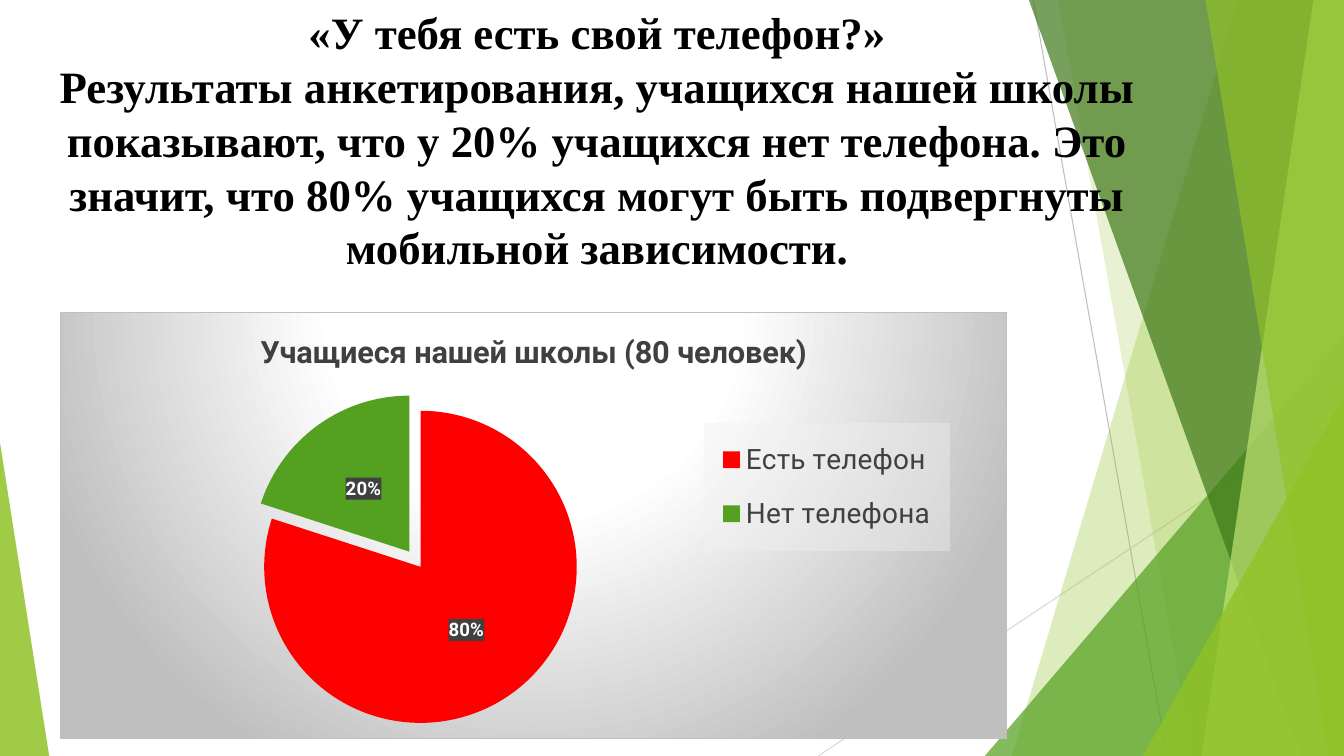
from lxml import etree
from pptx import Presentation, util as u
from pptx.chart.data import CategoryChartData
from pptx.dml.color import RGBColor
from pptx.enum import chart as ch, shapes, text
from pptx.oxml import parse_xml
from pptx.oxml.ns import nsdecls, qn

Cm = u.Cm
LIME = RGBColor(0x90, 0xC2, 0x26)
GREEN = RGBColor(0x54, 0xA0, 0x21)
MOSS = RGBColor(0x3F, 0x78, 0x19)
PALE = RGBColor(0xC0, 0xE4, 0x74)
RED = RGBColor(0xFF, 0, 0)
BLACK = RGBColor(0, 0, 0)
WHITE = RGBColor(0xFF, 0xFF, 0xFF)
DARK = RGBColor(0x40, 0x40, 0x40)
GRAY = RGBColor(0xBF, 0xBF, 0xBF)
LIGHT = RGBColor(0xD9, 0xD9, 0xD9)
MIST = RGBColor(0xF2, 0xF2, 0xF2)
WIDE, HIGH = 33.87, 19.05


def write(frame, words, size, face, color, bold=True, pitch=None):
    para = frame.paragraphs[0]
    para.text = words
    para.alignment = text.PP_ALIGN.CENTER
    if pitch:
        para.line_spacing = u.Pt(pitch)
    for run in para.runs:
        font = run.font
        font.size, font.name, font.bold = u.Pt(size), face, bold
        font.color.rgb = color


def veil(color, alpha):
    """Return a solid fill element with the given opacity in percent."""
    return (f'<a:solidFill><a:srgbClr val="{color}">'
            f'<a:alpha val="{alpha * 1000}"/></a:srgbClr></a:solidFill>')


deck = Presentation()
deck.slide_width, deck.slide_height = Cm(WIDE), Cm(HIGH)
slide = deck.slides.add_slide(deck.slide_layouts[6])
items = slide.shapes

# Thin lines behind the green bands
for x1, y1, x2, y2, color in [(26.04, 0, 29.41, HIGH, GRAY),
                              (WIDE, 10.24, 20.62, HIGH, LIGHT)]:
    line = items.add_connector(shapes.MSO_CONNECTOR.STRAIGHT,
                               Cm(x1), Cm(y1), Cm(x2), Cm(y2))
    line.line.color.rgb, line.line.width = color, u.Pt(0.75)
    etree.SubElement(line._element.spPr, qn("a:effectLst"))

# Bands reach the right edge: (top x, bottom x)
# Triangles stand on the bottom edge: (left, top, width, apex)
facets = [
    ((31.19, 25.5), LIME, 30),
    ((26.67, 30.05), LIME, 20),
    ((24.82, 8.46, 9.05, 1), GREEN, 72),
    ((25.93, 32.79), MOSS, 70),
    ((33.1, 30.28), PALE, 70),
    ((30.38, 33.48), LIME, 65),
    ((28.8, 9.98, 5.07, 1), LIME, 80),
    ((0, 11.15, 1.24, 0), LIME, 85),
]
for place, color, alpha in facets:
    if len(place) == 2:
        top, low = place
        path = items.build_freeform(top * 100, 0, scale=Cm(0.01))
        path.add_line_segments([(WIDE * 100, 0), (WIDE * 100, HIGH * 100),
                                (low * 100, HIGH * 100)])
        facet = path.convert_to_shape()
    else:
        left, top, width, apex = place
        facet = items.add_shape(shapes.MSO_SHAPE.ISOSCELES_TRIANGLE, Cm(left),
                                Cm(top), Cm(width), Cm(HIGH - top))
        facet.adjustments[0] = apex
    facet.shadow.inherit = False
    facet.line.fill.background()
    facet.fill.solid()
    facet.fill.fore_color.rgb = color
    tone = facet._element.spPr.find(".//" + qn("a:srgbClr"))
    etree.SubElement(tone, qn("a:alpha")).set("val", str(alpha * 1000))

# Heading
head = items.add_textbox(0, 0, Cm(30.1), Cm(7.4)).text_frame
head.word_wrap = True
write(head, "«У тебя есть свой телефон?»\vРезультаты анкетирования, учащихся "
      "нашей школы показывают, что у 20% учащихся нет телефона. Это значит, "
      "что 80% учащихся могут быть подвергнуты мобильной зависимости.",
      32, "Times New Roman", BLACK)

# Pie chart
topic = "Учащиеся нашей школы (80 человек)"
data = CategoryChartData()
data.categories = ["Есть телефон", "Нет телефона"]
data.add_series(topic, (80, 20))
chart = items.add_chart(ch.XL_CHART_TYPE.PIE, Cm(1.5), Cm(7.85), Cm(23.88),
                        Cm(10.77), data).chart
chart.font.name, chart.font.size = "Roboto", u.Pt(10)
write(chart.chart_title.text_frame, topic, 22, "Roboto", DARK)
chart.chart_title.include_in_layout = False

plot = chart.plots[0]
plot.vary_by_categories = True
pie = plot.series[0]
for i, color in enumerate([RED, GREEN]):
    fill = pie.points[i].format.fill
    fill.solid()
    fill.fore_color.rgb = color
burst = parse_xml(f'<c:explosion {nsdecls("c")} val="6"/>')
pie._element.find(qn("c:dPt")).addprevious(burst)

tags = pie.data_labels
tags.show_percentage, tags.show_value = True, False
tags.number_format, tags.number_format_is_linked = "0%", False
tags.position = ch.XL_LABEL_POSITION.CENTER
tags.font.name, tags.font.size = "Roboto", u.Pt(13.3)
tags.font.bold, tags.font.color.rgb = True, WHITE

chart.has_legend = True
key = chart.legend
key.position, key.include_in_layout = ch.XL_LEGEND_POSITION.RIGHT, False
key.font.name, key.font.size = "Roboto", u.Pt(20)
key.font.color.rgb = DARK

# Backgrounds of labels, legend and chart
spot = (f'<a:gradFill><a:gsLst><a:gs pos="0"><a:srgbClr val="{WHITE}"/></a:gs>'
        f'<a:gs pos="39000"><a:srgbClr val="{WHITE}"/></a:gs>'
        f'<a:gs pos="100000"><a:srgbClr val="{GRAY}"/></a:gs></a:gsLst>'
        '<a:path path="circle"><a:fillToRect l="50000" t="-80000" r="50000" '
        'b="180000"/></a:path></a:gradFill><a:ln w="9525"><a:solidFill>'
        f'<a:srgbClr val="{GRAY}"/></a:solidFill></a:ln>')
root = chart._chartSpace
for owner, look in [(tags._element, veil(DARK, 90)),
                    (key._element, veil(MIST, 39)), (root, spot)]:
    back = parse_xml(f'<c:spPr {nsdecls("c", "a")}>{look}</c:spPr>')
    owner.find(qn("c:txPr")).addprevious(back)

# Places of pie and legend as shares of the chart
area = root.chart.plotArea
for owner, inner, spots in [
        (area, True, (0.2, 0.19, 0.35, 0.78)),
        (key._element, False, (0.68, 0.26, 0.26, 0.3))]:
    for old in owner.findall(qn("c:layout")):
        owner.remove(old)
    body = '<c:layoutTarget val="inner"/>' if inner else ""
    body += '<c:xMode val="edge"/><c:yMode val="edge"/>'
    body += "".join(f'<c:{side} val="{val}"/>' for side, val in zip("xywh", spots))
    frame = parse_xml(f'<c:layout {nsdecls("c")}><c:manualLayout>{body}'
                      '</c:manualLayout></c:layout>')
    owner.insert(0 if inner else 1, frame)

deck.save("out.pptx")
